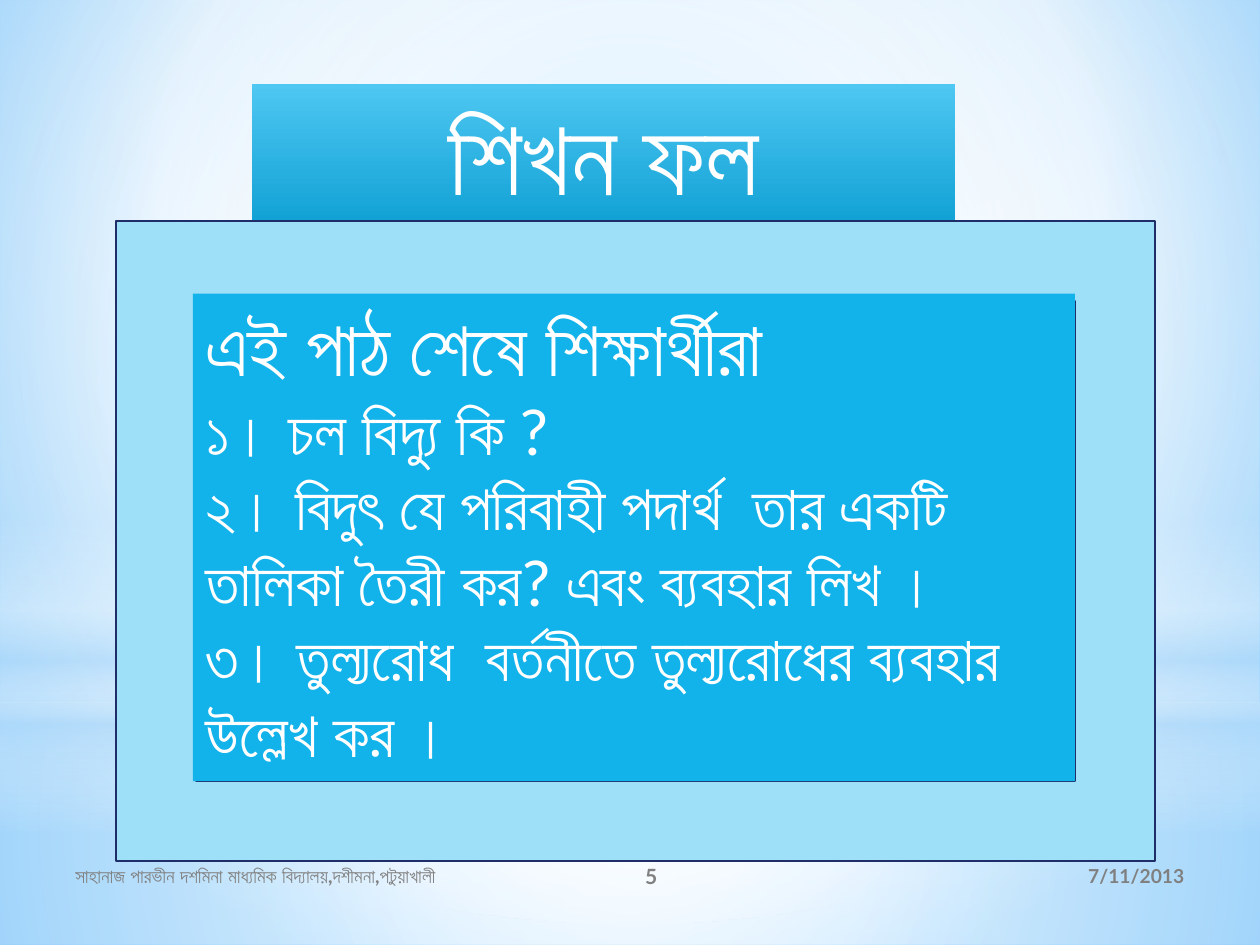
from lxml import etree
from pptx import Presentation
from pptx.dml.color import RGBColor
from pptx.enum.shapes import MSO_SHAPE
from pptx.enum.text import MSO_ANCHOR, MSO_AUTO_SIZE, PP_ALIGN
from pptx.oxml.ns import qn
from pptx.util import Cm, Pt

HUES = {
    "white": "FFFFFF", "pale": "B4DCFA", "sky": "9ED5FF", "deep": "5BB9FF",
    "top": "4EC7F2", "base": "11A1D4", "frame": "9EE0F8", "navy": "1F2E69",
    "panel": "12B2EB", "grey": "808080",
}
FONT = "Lato"
WIDE, HIGH = 25.4, 19.05


def hue(name):
    return RGBColor.from_string(HUES[name])


def blend(host, stops, angle=None, focus=(50, 50, 50, 50)):
    """Swap the solid fill in host for a gradient of (place, hue, opacity)."""
    grad = etree.Element(qn("a:gradFill"), rotWithShape="1")
    rows = etree.SubElement(grad, qn("a:gsLst"))
    for place, name, alpha in stops:
        stop = etree.SubElement(rows, qn("a:gs"), pos=str(place * 1000))
        tint = etree.SubElement(stop, qn("a:srgbClr"), val=HUES[name])
        if alpha < 100:
            etree.SubElement(tint, qn("a:alpha"), val=str(alpha * 1000))
    if angle is not None:
        etree.SubElement(grad, qn("a:lin"), ang=str(angle * 60000), scaled="0")
    else:
        ring = etree.SubElement(grad, qn("a:path"), path="circle")
        etree.SubElement(ring, qn("a:fillToRect"),
                         **{side: str(part * 1000) for side, part in zip("ltrb", focus)})
    host.replace(host.find(qn("a:solidFill")), grad)


def place(shape, box):
    shape.left, shape.top, shape.width, shape.height = map(Cm, box)


def block(shapes, kind, box, fill, line=None):
    shape = shapes.add_shape(kind, *map(Cm, box))
    shape.shadow.inherit = False
    shape.fill.solid()
    shape.fill.fore_color.rgb = hue(fill)
    if line:
        shape.line.color.rgb = hue(line)
        shape.line.width = Pt(1.25)
    else:
        shape.line.fill.background()
    return shape


def write(shape, lines, sizes, color="white", bold=False, align=PP_ALIGN.LEFT,
          anchor=MSO_ANCHOR.TOP, fit=MSO_AUTO_SIZE.NONE):
    frame = shape.text_frame
    frame.word_wrap = True
    frame.auto_size = fit
    frame.vertical_anchor = anchor
    for i, (line, size) in enumerate(zip(lines, sizes)):
        para = frame.add_paragraph() if i else frame.paragraphs[0]
        para.alignment = align
        run = para.add_run()
        run.text = line
        run.font.name = FONT
        run.font.size = Pt(size)
        run.font.bold = bold
        run.font.color.rgb = hue(color)


def backdrop(slide, box):
    x, y, w, h = box
    slide.background.fill.solid()
    blend(slide.element.find(".//" + qn("p:bgPr")),
          [(0, "sky", 100), (60, "white", 100), (100, "deep", 100)],
          focus=(20, 10, 20, 60))
    split = 14.17
    rect = MSO_SHAPE.RECTANGLE
    layers = [
        (rect, split, h - split,
         [(0, "white", 91), (37, "white", 76), (100, "pale", 79)], None),
        (rect, 0, split,
         [(0, "white", 89), (48, "white", 62), (100, "pale", 79)], None),
        (rect, 10.46, 6.35,
         [(0, "white", 0), (29, "white", 30), (45, "pale", 40),
          (55, "white", 26), (65, "pale", 60), (100, "white", 0)], 90),
        (MSO_SHAPE.OVAL, 4.45, split, [(0, "white", 100), (56, "white", 0)], None),
    ]
    for kind, top, tall, stops, angle in layers:
        layer = block(slide.shapes, kind, (x, y + top, w, tall), "white")
        blend(layer.element.spPr, stops, angle)


def footer(slide, box):
    x, y, w, h = box
    parts = [
        (15.87, 6.99, "7/11/2013", 11, PP_ALIGN.RIGHT),
        (0, 9.32, "সাহানাজ পারভীন দশমিনা মাধ্যমিক বিদ্যালয়,দশীমনা,পটুয়াখালী", 11,
         PP_ALIGN.LEFT),
        (9.32, 5.08, "5", 12, PP_ALIGN.CENTER),
    ]
    for left, wide, text, size, align in parts:
        note = slide.shapes.add_textbox(*map(Cm, (x + left, y, wide, h)))
        write(note, [text], [size], color="grey", bold=True, align=align,
              anchor=MSO_ANCHOR.MIDDLE)


def heading(slide, box):
    title = slide.shapes.title
    place(title, box)
    title.fill.solid()
    blend(title.element.spPr, [(0, "top", 100), (100, "base", 100)], 90)
    write(title, ["শিখন ফল"], [60], align=PP_ALIGN.CENTER,
          fit=MSO_AUTO_SIZE.SHAPE_TO_FIT_TEXT)
    # Bring the title in front of the backdrop
    title.element.getparent().append(title.element)


def goals(slide, box):
    x, y, w, h = box
    group = slide.shapes.add_group_shape()
    block(group.shapes, MSO_SHAPE.FRAME, box, "frame", "navy")
    panel = block(group.shapes, MSO_SHAPE.RECTANGLE,
                  (x + 1.55, y + 1.47, 17.78, 9.83), "panel")
    lines = [
        "এই পাঠ শেষে শিক্ষার্থীরা",
        "১। চল বিদ্যু কি ?",
        "২। বিদুৎ যে পরিবাহী পদার্থ  তার একটি তালিকা তৈরী কর? এবং ব্যবহার লিখ ।",
        "৩। তুল্যরোধ  বর্তনীতে তুল্যরোধের ব্যবহার উল্লেখ কর ।",
    ]
    write(panel, lines, [44, 36, 36, 36], fit=MSO_AUTO_SIZE.SHAPE_TO_FIT_TEXT)


def main():
    deck = Presentation()
    deck.slide_width, deck.slide_height = Cm(WIDE), Cm(HIGH)
    slide = deck.slides.add_slide(deck.slide_layouts[5])
    backdrop(slide, (0, 0, WIDE, HIGH))
    footer(slide, (1.27, 17.15, 22.86, 1.02))
    heading(slide, (5.08, 1.7, 14.17, 2.82))
    goals(slide, (2.34, 4.45, 20.95, 12.9))
    deck.save("out.pptx")


if __name__ == "__main__":
    main()
